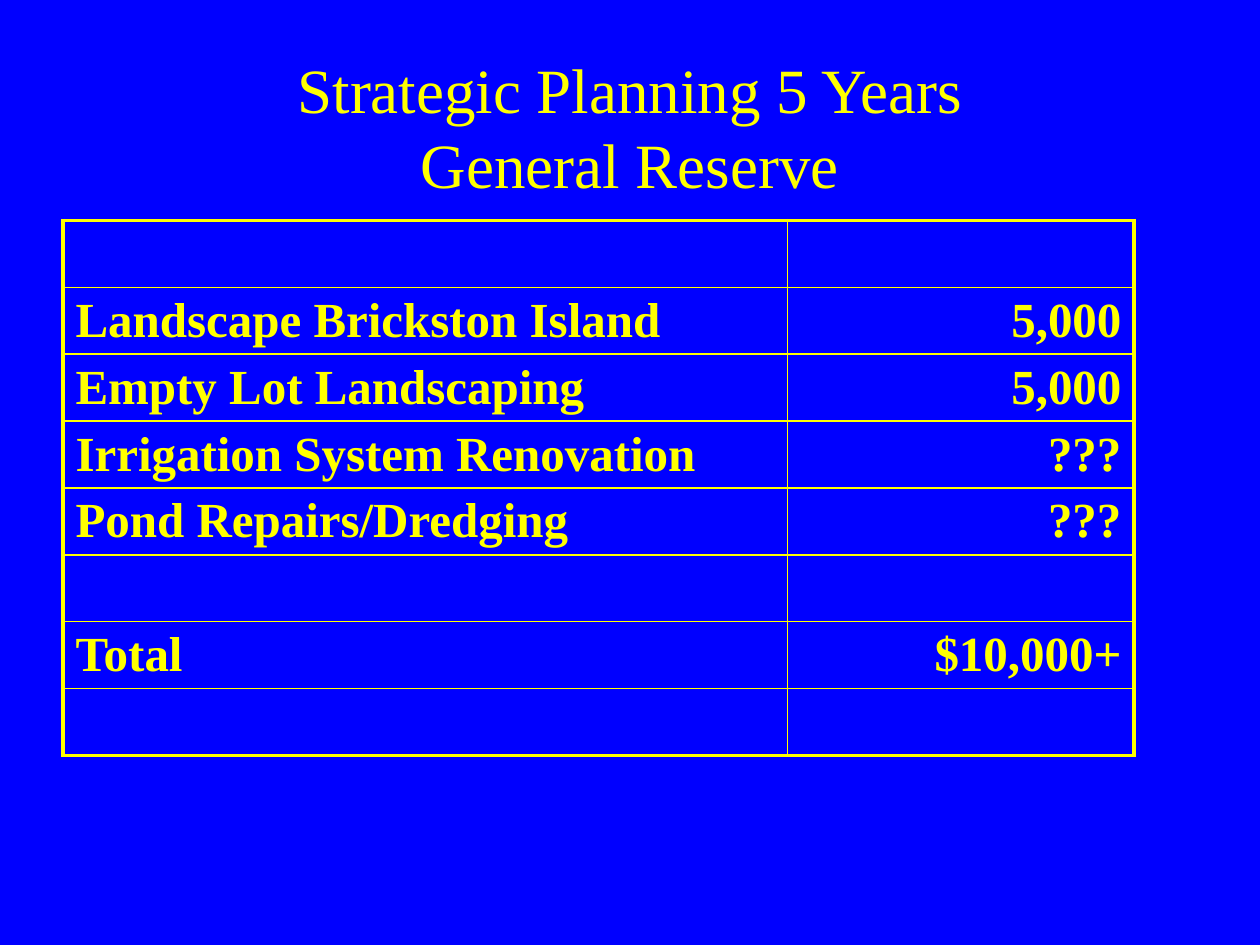
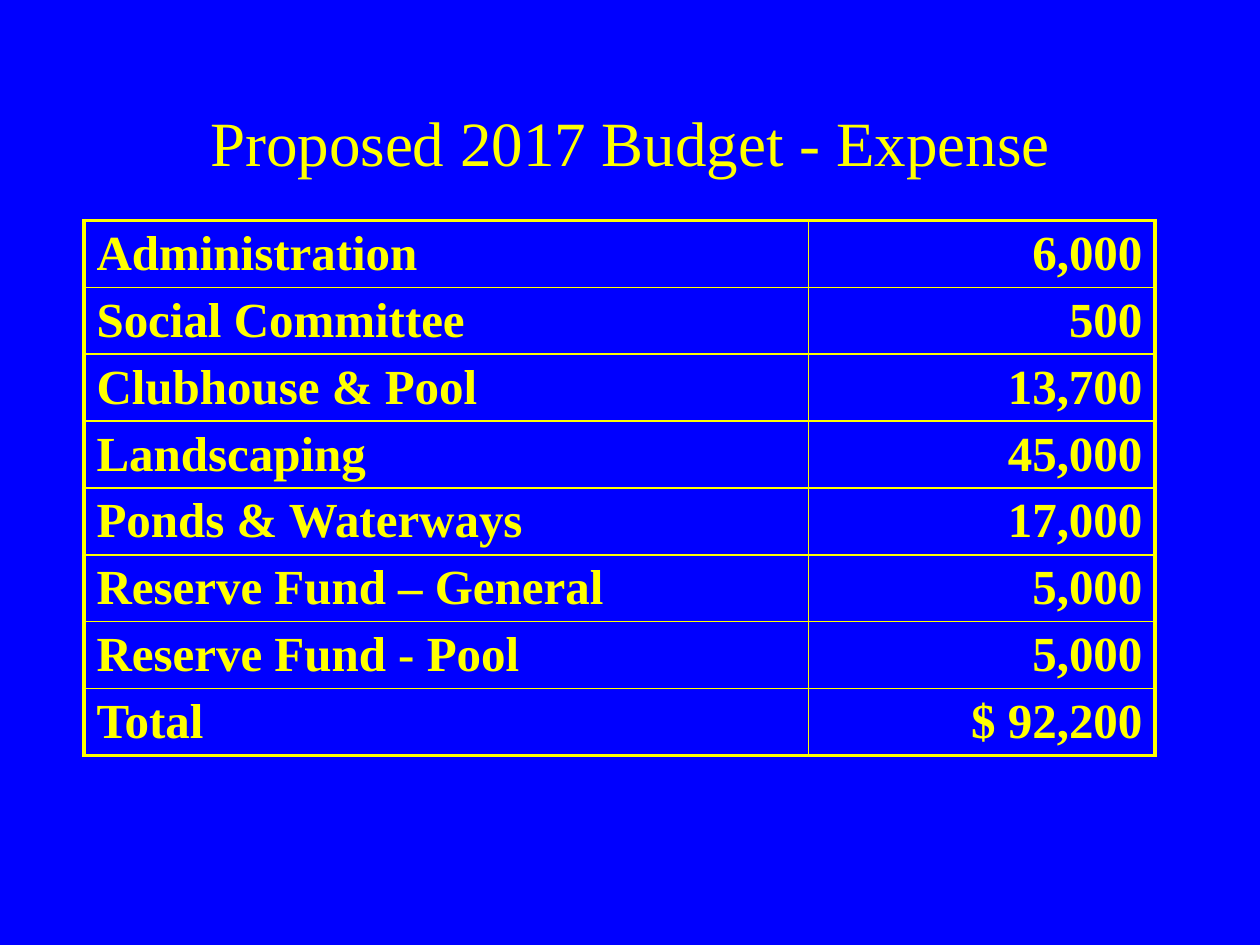
import lxml.etree
import pptx
import pptx.dml.color
import pptx.enum.text
import pptx.oxml.ns
import pptx.util

Pt = pptx.util.Pt
qn = pptx.oxml.ns.qn
ALIGN = pptx.enum.text.PP_ALIGN

COLORS = {"background": "0000FF", "accent": "FFFF00"}
FONT = "Times New Roman"
TITLE_SIZE, CELL_SIZE = 36, 28
OUTER_LINE, INNER_LINE = 2.25, 1
COLUMN_SHARES = (23 / 34, 11 / 34)

RESERVE_ROWS = [
    ("", ""),
    ("Landscape Brickston Island", "5,000"),
    ("Empty Lot Landscaping", "5,000"),
    ("Irrigation System Renovation", "???"),
    ("Pond Repairs/Dredging", "???"),
    ("", ""),
    ("Total", "$10,000+"),
    ("", ""),
]
EXPENSE_ROWS = [
    ("Administration", "6,000"),
    ("Social Committee", "500"),
    ("Clubhouse & Pool", "13,700"),
    ("Landscaping", "45,000"),
    ("Ponds & Waterways", "17,000"),
    ("Reserve Fund – General", "5,000"),
    ("Reserve Fund - Pool", "5,000"),
    ("Total", "$ 92,200"),
]


def rgb(name):
    return pptx.dml.color.RGBColor.from_string(COLORS[name])


def add_run(p, text, size, bold=False):
    r = p.add_run()
    r.text = text
    r.font.name = FONT
    r.font.size = Pt(size)
    r.font.bold = bold
    r.font.color.rgb = rgb("accent")


def set_title(s, box, lines):
    sp = s.shapes.title
    sp.left, sp.top, sp.width, sp.height = map(Pt, box)
    tf = sp.text_frame
    tf.word_wrap = True
    tf.auto_size = pptx.enum.text.MSO_AUTO_SIZE.NONE
    tf.vertical_anchor = pptx.enum.text.MSO_ANCHOR.MIDDLE
    p = tf.paragraphs[0]
    p.alignment = ALIGN.CENTER
    for i, line in enumerate(lines):
        if i:
            p.add_line_break()
        add_run(p, line, TITLE_SIZE)


def set_borders(cell, widths):
    tc_pr = cell._tc.get_or_add_tcPr()
    for side, width in widths.items():
        ln = lxml.etree.SubElement(tc_pr, qn(f"a:ln{side}"), w=str(int(Pt(width))))
        fill = lxml.etree.SubElement(ln, qn("a:solidFill"))
        lxml.etree.SubElement(fill, qn("a:srgbClr"), val=COLORS["accent"])


def set_cell_text(cell, text, alignment):
    p = cell.text_frame.paragraphs[0]
    p.alignment = alignment
    before = lxml.etree.SubElement(p._p.get_or_add_pPr(), qn("a:spcBef"))
    lxml.etree.SubElement(before, qn("a:spcPct"), val="20000")
    add_run(p, text, CELL_SIZE, bold=True)


def add_budget_table(s, box, rows):
    left, top, width, height = box
    last_row, last_col = len(rows) - 1, len(COLUMN_SHARES) - 1
    frame = s.shapes.add_table(len(rows), len(COLUMN_SHARES), *map(Pt, box))
    table = frame.table
    table.first_row = table.horz_banding = False
    for column, share in zip(table.columns, COLUMN_SHARES):
        column.width = Pt(width * share)
    for i, values in enumerate(rows):
        table.rows[i].height = Pt(height / len(rows))
        for j, text in enumerate(values):
            cell = table.cell(i, j)
            edges = {"L": j == 0, "R": j == last_col, "T": i == 0, "B": i == last_row}
            set_borders(cell, {side: OUTER_LINE if outer else INNER_LINE
                               for side, outer in edges.items()})
            cell.fill.background()
            if text:
                set_cell_text(cell, text, ALIGN.RIGHT if j else ALIGN.LEFT)


def add_budget_slide(prs, title_box, title_lines, table_box, rows):
    s = prs.slides.add_slide(prs.slide_layouts.get_by_name("Title Only"))
    set_title(s, title_box, title_lines)
    add_budget_table(s, table_box, rows)


def main():
    prs = pptx.Presentation()
    prs.slide_width, prs.slide_height = Pt(720), Pt(540)
    fill = prs.slide_master.background.fill
    fill.solid()
    fill.fore_color.rgb = rgb("background")
    add_budget_slide(prs, (54, 30, 612, 84),
                     ["Strategic Planning 5 Years", "General Reserve"],
                     (36, 126, 612, 305.6), RESERVE_ROWS)
    add_budget_slide(prs, (54, 48, 612, 66),
                     ["Proposed 2017 Budget - Expense"],
                     (48, 126, 612, 305.6), EXPENSE_ROWS)
    prs.save("out.pptx")


if __name__ == "__main__":
    main()
